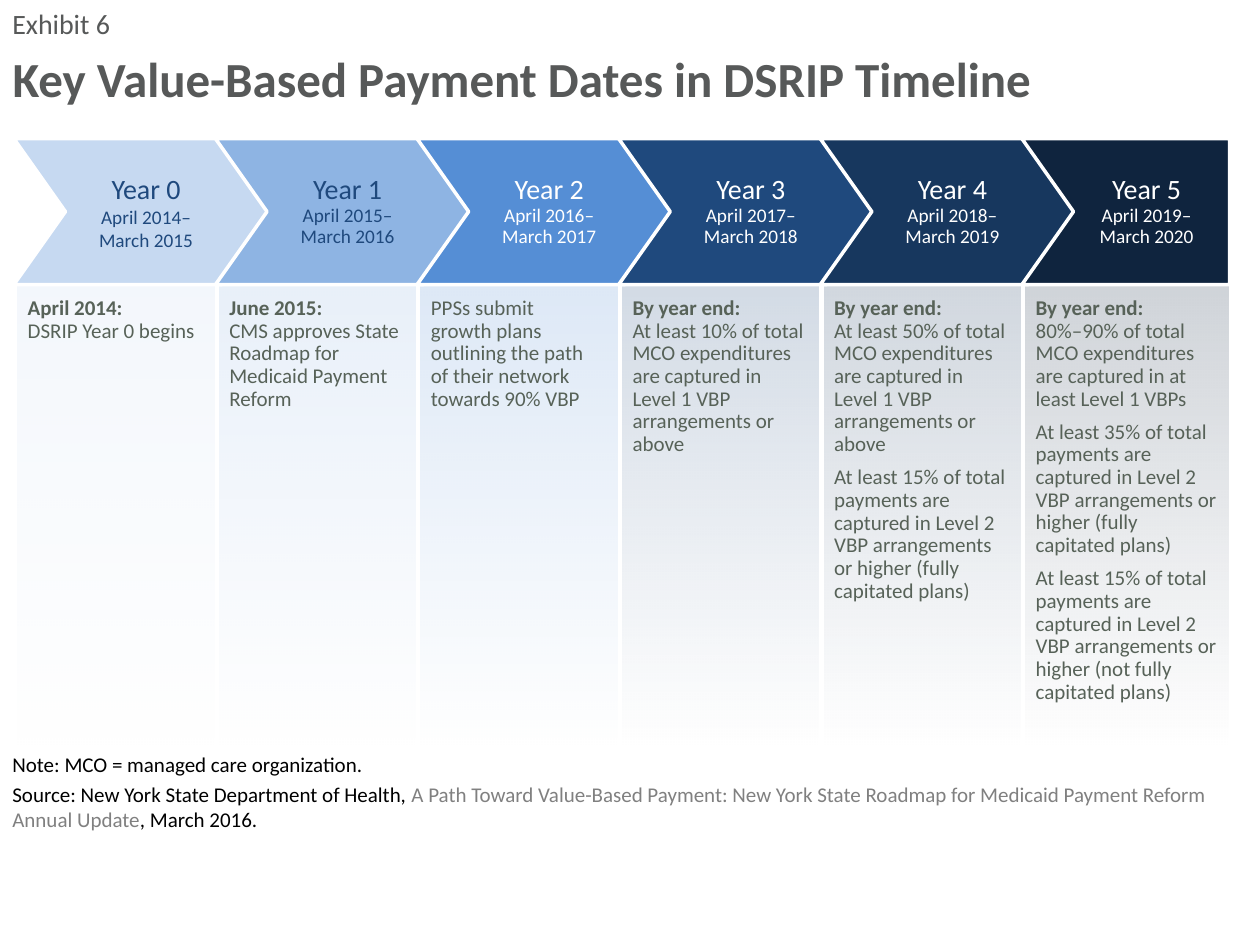
from lxml import etree
from pptx import Presentation
from pptx.dml.color import RGBColor
from pptx.enum.shapes import MSO_SHAPE
from pptx.enum.text import MSO_ANCHOR, PP_ALIGN
from pptx.oxml.ns import qn
from pptx.util import Inches, Pt

RECTANGLE = MSO_SHAPE.RECTANGLE
TOP, MIDDLE, BOTTOM = MSO_ANCHOR.TOP, MSO_ANCHOR.MIDDLE, MSO_ANCHOR.BOTTOM
LEFT, CENTER = PP_ALIGN.LEFT, PP_ALIGN.CENTER

WHITE = RGBColor(0xFF, 0xFF, 0xFF)
BLACK = RGBColor(0x00, 0x00, 0x00)
HEADING = RGBColor(0x57, 0x59, 0x59)
BODY = RGBColor(0x57, 0x62, 0x58)
CITED = RGBColor(0x80, 0x80, 0x80)
NAVY = RGBColor(0x1F, 0x49, 0x7D)
ICE = RGBColor(0xC6, 0xD9, 0xF1)
SKY = RGBColor(0x8E, 0xB4, 0xE3)
AZURE = RGBColor(0x55, 0x8E, 0xD5)
DEEP = RGBColor(0x17, 0x37, 0x5E)
INK = RGBColor(0x0F, 0x24, 0x3E)

# Grid: one column per year, an arrow row above a panel row
COLUMN = 1.6
ARROW_LEFT, ARROW_TOP, ARROW_HEIGHT = 0.11, 1.1, 1.16
ARROW_BODY, ARROW_POINT = 1.65, 0.41
PANEL_LEFT, PANEL_TOP, PANEL_HEIGHT = 0.14, 2.25, 3.71
DETAIL_LEFT, DETAIL_TOP = 0.22, 2.36

# Fill, label colour, detail width, detail heading, detail paragraphs
YEARS = [
    (ICE, NAVY, 1.52, "April 2014:", ["DSRIP Year 0 begins"]),
    (SKY, NAVY, 1.52, "June 2015:",
     ["CMS approves State Roadmap for Medicaid Payment Reform"]),
    (AZURE, WHITE, 1.3, None,
     ["PPSs submit growth plans outlining the path of their network towards 90% VBP"]),
    (NAVY, WHITE, 1.39, "By year end:",
     ["At least 10% of total MCO expenditures are captured in Level 1 VBP "
      "arrangements or above"]),
    (DEEP, WHITE, 1.38, "By year end:",
     ["At least 50% of total MCO expenditures are captured in Level 1 VBP "
      "arrangements or above",
      "At least 15% of total payments are captured in Level 2 VBP arrangements "
      "or higher (fully capitated plans)"]),
    (INK, WHITE, 1.46, "By year end:",
     ["80%–90% of total MCO expenditures are captured in at least Level 1 VBPs",
      "At least 35% of total payments are captured in Level 2 VBP arrangements "
      "or higher (fully capitated plans)",
      "At least 15% of total payments are captured in Level 2 VBP arrangements "
      "or higher (not fully capitated plans)"]),
]


def write(shape, paragraphs, anchor=TOP, insets=(0.1, 0.05, 0.1, 0.05), **layout):
    """Fill a shape with paragraphs of (text, size, colour, bold) runs; None breaks the line."""
    frame = shape.text_frame
    frame.word_wrap = True
    frame.vertical_anchor = anchor
    for side, inset in zip(("left", "top", "right", "bottom"), insets):
        setattr(frame, f"margin_{side}", Inches(inset))
    for index, runs in enumerate(paragraphs):
        paragraph = frame.add_paragraph() if index else frame.paragraphs[0]
        for name, value in layout.items():
            if index or name != "space_before":
                setattr(paragraph, name, value)
        size = None
        for part in runs:
            if part is None:
                paragraph.add_line_break()
                line_break = paragraph._p[-1]
                etree.SubElement(line_break, qn("a:rPr"), sz=str(size * 100))
                continue
            text, size, color, bold = part
            run = paragraph.add_run()
            run.text = text
            for name, value in {"name": "Calibri", "size": Pt(size), "bold": bold}.items():
                setattr(run.font, name, value)
            run.font.color.rgb = color


prs = Presentation()
prs.slide_width, prs.slide_height = Inches(10), Inches(7.5)
slide = prs.slides.add_slide(prs.slide_layouts[5])
shapes = slide.shapes

title = shapes.title
title.left, title.top = 0, Inches(0.33)
title.width, title.height = prs.slide_width, Inches(0.57)
write(title, [[("Key Value-Based Payment Dates in DSRIP Timeline", 28, HEADING, True)]],
      MIDDLE, alignment=LEFT)

exhibit = shapes.add_textbox(0, 0, prs.slide_width, Inches(0.33))
write(exhibit, [[("Exhibit 6", 16, HEADING, False)]])

notes = shapes.add_textbox(0, Inches(5.93), Inches(9.83), Inches(0.72))
write(notes, [
    [("Note: MCO = managed care organization.", 12, BLACK, False)],
    [("Source: New York State Department of Health, ", 12, BLACK, False),
     ("A Path Toward Value-Based Payment: New York State Roadmap for Medicaid "
      "Payment Reform Annual Update", 12, CITED, False),
     (", March 2016.", 12, BLACK, False)],
], BOTTOM, space_before=Pt(2.4))

last = len(YEARS) - 1

# Panels fade from a light tint at the top to nothing at the bottom
for year, (fill, *_) in enumerate(YEARS):
    panel = shapes.add_shape(
        RECTANGLE, Inches(PANEL_LEFT + year * COLUMN), Inches(PANEL_TOP),
        Inches(1.61 if year == last else 1.56), Inches(PANEL_HEIGHT))
    panel.shadow.inherit = False
    panel.line.fill.background()
    panel.fill.gradient()
    panel.fill.gradient_angle = 90
    for stop in panel.fill.gradient_stops:
        stop.color.rgb = fill
    tints = panel.element.spPr.iter(qn("a:srgbClr"))
    for tint, opacity in zip(tints, (0, 20)):
        etree.SubElement(tint, qn("a:alpha"), val=str(opacity * 1000))

for year, (fill, label, *_) in enumerate(YEARS):
    left = ARROW_LEFT + year * COLUMN
    right = left + ARROW_BODY
    middle, bottom = ARROW_TOP + ARROW_HEIGHT / 2, ARROW_TOP + ARROW_HEIGHT
    tip = right if year == last else right + ARROW_POINT
    outline = [(right, ARROW_TOP), (tip, middle), (right, bottom),
               (left, bottom), (left + ARROW_POINT, middle)]
    builder = shapes.build_freeform(Inches(left), Inches(ARROW_TOP))
    builder.add_line_segments([(Inches(x), Inches(y)) for x, y in outline])
    arrow = builder.convert_to_shape()
    arrow.shadow.inherit = False
    arrow.fill.solid()
    arrow.fill.fore_color.rgb = fill
    arrow.line.color.rgb = WHITE
    arrow.line.width = Pt(2)
    write(arrow, [[(f"Year {year}", 16, label, False), None,
                   (f"April {2014 + year}–", 11, label, False), None,
                   (f"March {2015 + year}", 11, label, False)]],
          MIDDLE, (0.43, 0.02, 0.1 if year == last else 0.39, 0.02),
          alignment=CENTER, line_spacing=0.9 if year else 1.0)

for year, (_, _, width, heading, details) in enumerate(YEARS):
    detail = shapes.add_textbox(Inches(DETAIL_LEFT + year * COLUMN), Inches(DETAIL_TOP),
                                Inches(width), Inches(3.36 if year == last else 2.49))
    paragraphs = [[(text, 12, BODY, False)] for text in details]
    if heading:
        paragraphs[0][:0] = [(heading, 12, BODY, True), None]
    write(detail, paragraphs, insets=(0, 0, 0, 0), line_spacing=0.9, space_after=Pt(6))

prs.save("out.pptx")
